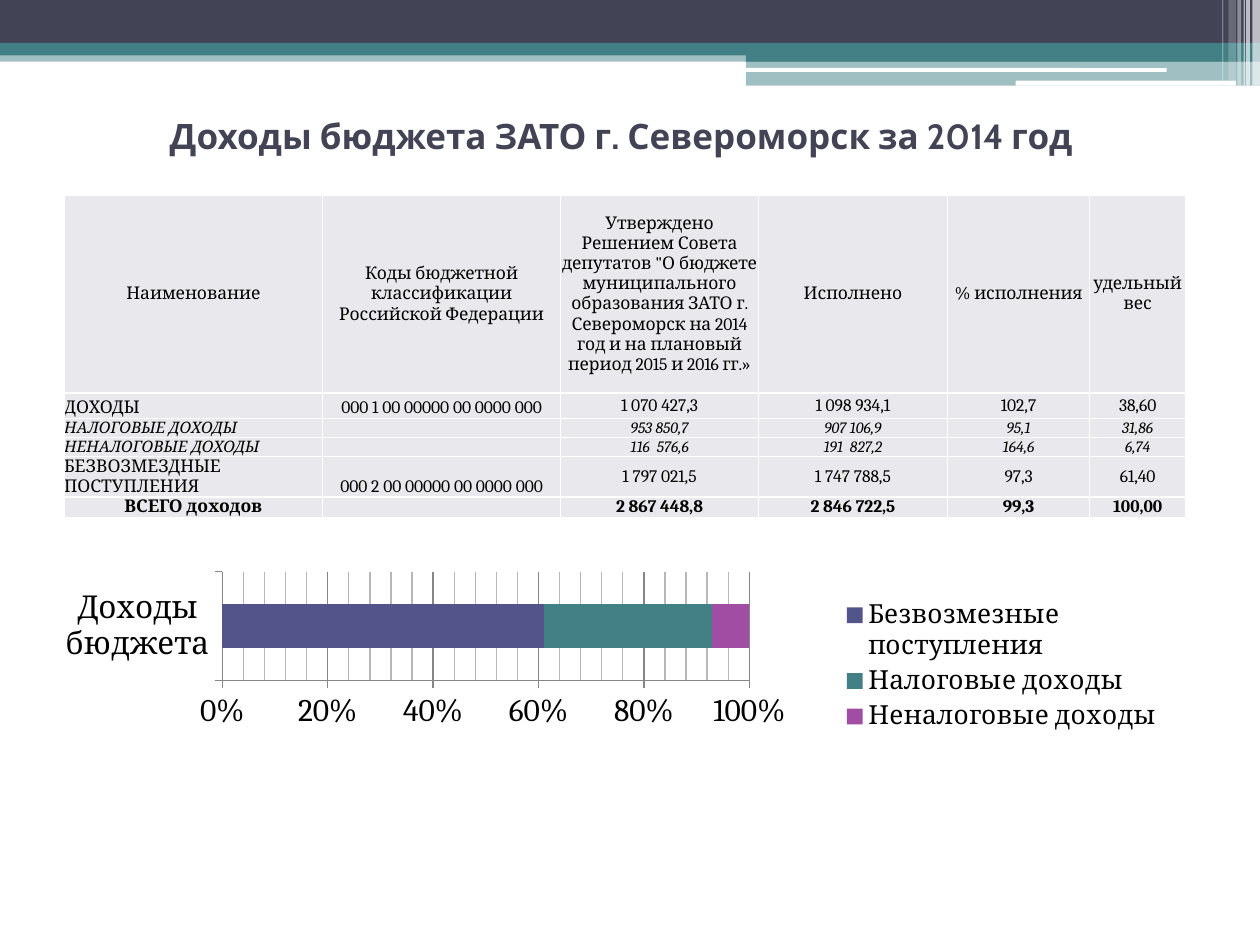
import dataclasses

import lxml.etree
import pptx
import pptx.chart.data
import pptx.dml.color
import pptx.enum.chart
import pptx.enum.shapes
import pptx.enum.text
import pptx.oxml
import pptx.oxml.ns
import pptx.util

Inches, Pt = pptx.util.Inches, pptx.util.Pt
Align = pptx.enum.text.PP_ALIGN
Anchor = pptx.enum.text.MSO_ANCHOR
Kind = pptx.enum.shapes.MSO_SHAPE
Enum = pptx.enum.chart
qn = pptx.oxml.ns.qn


@dataclasses.dataclass
class Theme:
    dark: str = "424456"
    teal: str = "438086"
    white: str = "FFFFFF"
    black: str = "000000"
    cell: str = "E9E9ED"
    grid: str = "868686"
    bars: tuple = ("53548A", "438086", "A04DA3")
    head: str = "Cabin"
    body: str = "Cambria"
    title: int = 20
    table: int = 10
    small: int = 9
    axis: int = 18
    legend: int = 15


def tint(code):
    return pptx.dml.color.RGBColor.from_string(code)


def assign(item, values):
    for name, value in values.items():
        setattr(item, name, value)


class Page:
    def __init__(self, deck, theme):
        self.theme = theme
        self.slide = deck.slides.add_slide(deck.slide_layouts[5])

    def style(self, font, color, **values):
        assign(font, values)
        font.color.rgb = tint(color)

    def band(self, box, color, alpha=100, kind=Kind.RECTANGLE):
        shape = self.slide.shapes.add_shape(kind, *map(Inches, box))
        shape.shadow.inherit = False
        shape.fill.solid()
        shape.fill.fore_color.rgb = tint(color)
        shape.line.fill.background()
        if alpha < 100:
            node = shape.fill._xPr.find(".//" + qn("a:srgbClr"))
            lxml.etree.SubElement(node, qn("a:alpha")).set("val", str(alpha * 1000))

    def title(self, text, box):
        shape = self.slide.shapes.title
        assign(shape, dict(zip(("left", "top", "width", "height"), map(Inches, box))))
        frame = shape.text_frame
        frame.text = text
        assign(frame, {"vertical_anchor": Anchor.MIDDLE, "word_wrap": True})
        line = frame.paragraphs[0]
        line.alignment = Align.CENTER
        self.style(line.runs[0].font, self.theme.dark, name=self.theme.head,
                   size=Pt(self.theme.title), bold=True)

    def border(self, cell):
        props = cell._tc.get_or_add_tcPr()
        for spot, side in enumerate(("lnL", "lnR", "lnT", "lnB")):
            props.insert(spot, pptx.oxml.parse_xml(
                f'<a:{side} {pptx.oxml.ns.nsdecls("a")} w="12700"><a:solidFill>'
                f'<a:srgbClr val="{self.theme.white}"/></a:solidFill></a:{side}>'))

    def cell(self, cell, text, align, anchor, **values):
        sides = ("left", "right", "top", "bottom")
        assign(cell, {f"margin_{side}": 0 for side in sides})
        cell.vertical_anchor = anchor
        cell.fill.solid()
        cell.fill.fore_color.rgb = tint(self.theme.cell)
        self.border(cell)
        line = cell.text_frame.paragraphs[0]
        line.alignment = align
        if text:
            run = line.add_run()
            run.text = text
            self.style(run.font, self.theme.black, name=self.theme.body, **values)
        else:
            # An empty cell must not stretch its row
            line._p.get_or_add_endParaRPr().set("sz", str(self.theme.small * 100))

    def table(self, rows, box, wides, highs, looks):
        grid = self.slide.shapes.add_table(
            len(rows), len(wides), *map(Inches, box)).table
        assign(grid, {"first_row": False, "horz_banding": False})
        for col, wide in zip(grid.columns, wides):
            col.width = Inches(wide)
        for r, (row, high) in enumerate(zip(rows, highs)):
            grid.rows[r].height = Inches(high)
            look = {"size": Pt(self.theme.table), **looks.get(r, {})}
            for c, text in enumerate(row):
                label = c == 0 and 0 < r < len(rows) - 1
                low = r > 0 and c < 2
                self.cell(grid.cell(r, c), text,
                          Align.JUSTIFY if label else Align.CENTER,
                          Anchor.BOTTOM if low else Anchor.MIDDLE, **look)

    def chart(self, cat, parts, box, plot):
        data = pptx.chart.data.CategoryChartData()
        data.categories = [cat]
        for name, value in parts.items():
            data.add_series(name, [value])
        chart = self.slide.shapes.add_chart(
            Enum.XL_CHART_TYPE.BAR_STACKED_100, *map(Inches, box), data).chart
        assign(chart, {"has_title": False, "has_legend": True})
        self.style(chart.font, self.theme.black, name=self.theme.body,
                   size=Pt(self.theme.axis))
        bars = chart.plots[0]
        assign(bars, {"gap_width": 150, "overlap": 100, "vary_by_categories": False})
        for item, color in zip(bars.series, self.theme.bars):
            item.format.fill.solid()
            item.format.fill.fore_color.rgb = tint(color)

        # Axes and their grid
        scale = chart.value_axis
        assign(scale, {"has_major_gridlines": True, "has_minor_gridlines": True,
                       "minimum_scale": 0, "maximum_scale": 1, "major_unit": 0.2,
                       "minor_unit": 0.04})
        assign(scale.tick_labels, {"number_format": "0%",
                                   "number_format_is_linked": False})
        for axis in (scale, chart.category_axis):
            axis.major_tick_mark = Enum.XL_TICK_MARK.OUTSIDE
        for part in (scale, chart.category_axis, scale.major_gridlines):
            part.format.line.color.rgb = tint(self.theme.grid)

        # Legend
        assign(chart.legend, {"position": Enum.XL_LEGEND_POSITION.RIGHT,
                              "include_in_layout": False})
        self.style(chart.legend.font, self.theme.black, name=self.theme.body,
                   size=Pt(self.theme.legend))

        # Fixed plot area
        area = chart._chartSpace.find(".//" + qn("c:plotArea"))
        for old in area.findall(qn("c:layout")):
            area.remove(old)
        frame = lxml.etree.Element(qn("c:layout"))
        area.insert(0, frame)
        hand = lxml.etree.SubElement(frame, qn("c:manualLayout"))
        marks = {"layoutTarget": "inner", "xMode": "edge", "yMode": "edge",
                 **dict(zip("xywh", plot))}
        for name, value in marks.items():
            lxml.etree.SubElement(hand, qn("c:" + name)).set("val", str(value))


def main():
    deck = pptx.Presentation()
    assign(deck, {"slide_width": Inches(10), "slide_height": Inches(7.5)})
    theme = Theme()
    page = Page(deck, theme)

    # Top bands
    for box, color, alpha in (
            ((0, 0.4, 10, 0.09), theme.teal, 50),
            ((0, 0, 10, 0.34), theme.dark, 100),
            ((0, 0.34, 10, 0.1), theme.teal, 100),
            ((5.92, 0.39, 4.08, 0.1), theme.teal, 100),
            ((5.92, 0.48, 4.08, 0.2), theme.teal, 50)):
        page.band(box, color, alpha)
    for box in ((5.91, 0.54, 3.35, 0.03), (8.06, 0.64, 1.75, 0.04)):
        page.band(box, theme.white, kind=Kind.ROUNDED_RECTANGLE)

    # Pale stripes in the corner
    for left, wide, high, alpha in (
            (9.94, 0.06, 0.68, 65), (9.89, 0.03, 0.68, 65), (9.87, 0.01, 0.68, 60),
            (9.82, 0.03, 0.68, 40), (9.75, 0.06, 0.64, 20), (9.7, 0.01, 0.64, 30)):
        page.band((left, 0, wide, high), theme.white, alpha)

    page.title("Доходы бюджета ЗАТО г. Североморск за 2014 год", (0.43, 0.76, 9, 0.63))

    # Budget table
    rows = (
        ("Наименование", "Коды бюджетной классификации Российской Федерации",
         "Утверждено Решением Совета депутатов \"О бюджете муниципального образования "
         "ЗАТО г. Североморск на 2014 год и на плановый период 2015 и 2016 гг.»",
         "Исполнено", "% исполнения", "удельный вес"),
        ("ДОХОДЫ", "000 1 00 00000 00 0000 000",
         "1 070 427,3", "1 098 934,1", "102,7", "38,60"),
        ("НАЛОГОВЫЕ ДОХОДЫ", "", "953 850,7", "907 106,9", "95,1", "31,86"),
        ("НЕНАЛОГОВЫЕ ДОХОДЫ", "", "116  576,6", "191  827,2", "164,6", "6,74"),
        ("БЕЗВОЗМЕЗДНЫЕ ПОСТУПЛЕНИЯ", "000 2 00 00000 00 0000 000",
         "1 797 021,5", "1 747 788,5", "97,3", "61,40"),
        ("ВСЕГО доходов", "", "2 867 448,8", "2 846 722,5", "99,3", "100,00"))
    minor = {"size": Pt(theme.small), "italic": True}
    page.table(rows, (0.51, 1.55, 8.9, 2.62), (2.05, 1.89, 1.57, 1.5, 1.13, 0.76),
               (1.57, 0.2, 0.1, 0.1, 0.24, 0.1),
               {2: minor, 3: minor, 5: {"bold": True}})

    # Income shares
    page.chart("Доходы бюджета",
               {"Безвозмезные поступления": 61, "Налоговые доходы": 32,
                "Неналоговые доходы": 7},
               (0.43, 4.3, 8.9, 1.97), (0.15, 0.12, 0.47, 0.44))
    deck.save("out.pptx")


if __name__ == "__main__":
    main()
